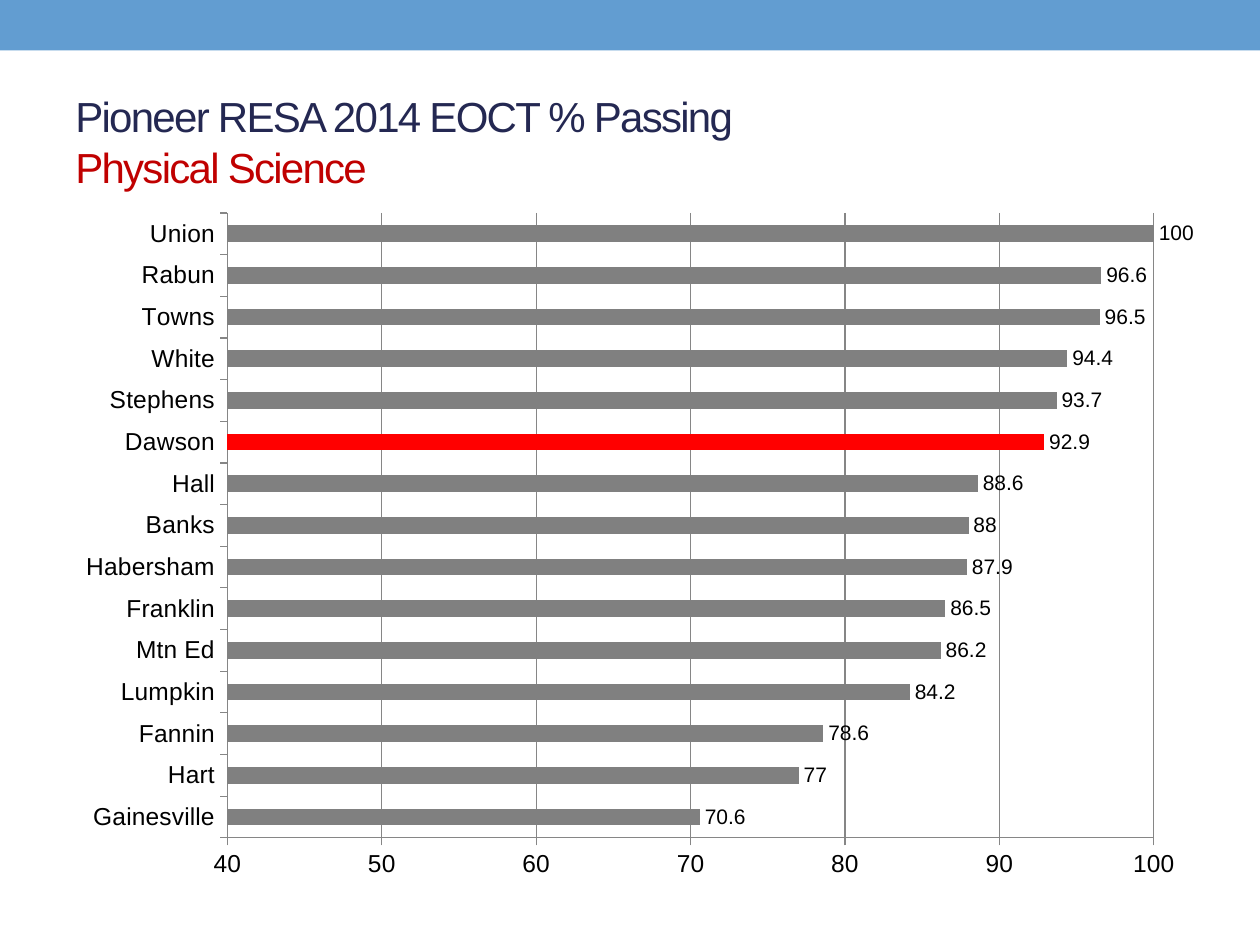
"""Build a slide with a bar chart of Physical Science passing rates by school system."""
import lxml.etree
import pptx
import pptx.chart.data
import pptx.dml.color
import pptx.enum.chart
import pptx.enum.shapes
import pptx.enum.text
import pptx.oxml
import pptx.util

COLOURS = {
    "band": "629DD1", "title": "242852", "subject": "C00000", "text": "000000",
    "bar": "808080", "highlight": "FF0000", "line": "868686",
}
HIGHLIGHTED = "Dawson"
PASSING = {
    "Gainesville": 70.6, "Hart": 77, "Fannin": 78.6, "Lumpkin": 84.2, "Mtn Ed": 86.2,
    "Franklin": 86.5, "Habersham": 87.9, "Banks": 88, "Hall": 88.6, "Dawson": 92.9,
    "Stephens": 93.7, "White": 94.4, "Towns": 96.5, "Rabun": 96.6, "Union": 100,
}


def colour(name):
    return pptx.dml.color.RGBColor.from_string(COLOURS[name])


def style_font(font, size, colour_name):
    font.name = "Arial"
    font.size = pptx.util.Pt(size)
    font.color.rgb = colour(colour_name)


presentation = pptx.Presentation()
presentation.slide_width = pptx.util.Inches(10)
presentation.slide_height = pptx.util.Inches(7.5)
slide = presentation.slides.add_slide(presentation.slide_layouts[6])
margin = pptx.util.Inches(0.5)
content_width = presentation.slide_width - 2 * margin

band = slide.shapes.add_shape(
    pptx.enum.shapes.MSO_SHAPE.RECTANGLE, 0, 0, presentation.slide_width, pptx.util.Inches(0.4))
band.shadow.inherit = False
band.fill.solid()
band.fill.fore_color.rgb = colour("band")
band.line.fill.background()

title = slide.shapes.add_textbox(
    margin, pptx.util.Inches(0.58), content_width, pptx.util.Inches(1.08))
title.text_frame.word_wrap = True
title.text_frame.vertical_anchor = pptx.enum.text.MSO_ANCHOR.MIDDLE
title.text_frame.text = "Pioneer RESA 2014 EOCT % Passing\vPhysical Science"
for run, name in zip(title.text_frame.paragraphs[0].runs, ("title", "subject")):
    style_font(run.font, 24, name)
    run.font._element.set("spc", "-100")

chart_data = pptx.chart.data.CategoryChartData()
chart_data.categories = list(PASSING)
chart_data.add_series("Series 1", list(PASSING.values()))
chart = slide.shapes.add_chart(
    pptx.enum.chart.XL_CHART_TYPE.BAR_CLUSTERED, margin, pptx.util.Inches(1.58),
    content_width, pptx.util.Inches(5.5), chart_data).chart
chart.has_legend = False
chart.has_title = False
style_font(chart.font, 14, "text")

plot_area = chart.plots[0]._element.getparent()
for old_layout in plot_area.findall(pptx.oxml.ns.qn("c:layout")):
    plot_area.remove(old_layout)
layout = lxml.etree.Element(pptx.oxml.ns.qn("c:layout"))
manual = lxml.etree.SubElement(layout, pptx.oxml.ns.qn("c:manualLayout"))
for tag, value in (("layoutTarget", "inner"), ("xMode", "edge"), ("yMode", "edge"),
                   ("x", "0.145"), ("y", "0.02"), ("w", "0.817"), ("h", "0.902")):
    lxml.etree.SubElement(manual, pptx.oxml.ns.qn("c:" + tag)).set("val", value)
plot_area.insert(0, layout)

value_axis = chart.value_axis
value_axis.minimum_scale = 40
value_axis.maximum_scale = 100
value_axis.major_unit = 10
value_axis.has_major_gridlines = True
value_axis.major_gridlines.format.line.color.rgb = colour("line")
value_axis.tick_labels.number_format = "0"
value_axis.tick_labels.number_format_is_linked = False
for axis in (chart.category_axis, value_axis):
    axis.major_tick_mark = pptx.enum.chart.XL_TICK_MARK.OUTSIDE
    axis.format.line.color.rgb = colour("line")
    style_font(axis.tick_labels.font, 14, "text")

plot = chart.plots[0]
plot.gap_width = 150
plot.vary_by_categories = False
plot.has_data_labels = True
plot.data_labels.show_value = True
plot.data_labels.position = pptx.enum.chart.XL_LABEL_POSITION.OUTSIDE_END
style_font(plot.data_labels.font, 12, "text")

series = plot.series[0]
series.invert_if_negative = False
highlighted_bar = series.points[list(PASSING).index(HIGHLIGHTED)]
for bar, name in ((series, "bar"), (highlighted_bar, "highlight")):
    bar.format.fill.solid()
    bar.format.fill.fore_color.rgb = colour(name)

presentation.save("out.pptx")
